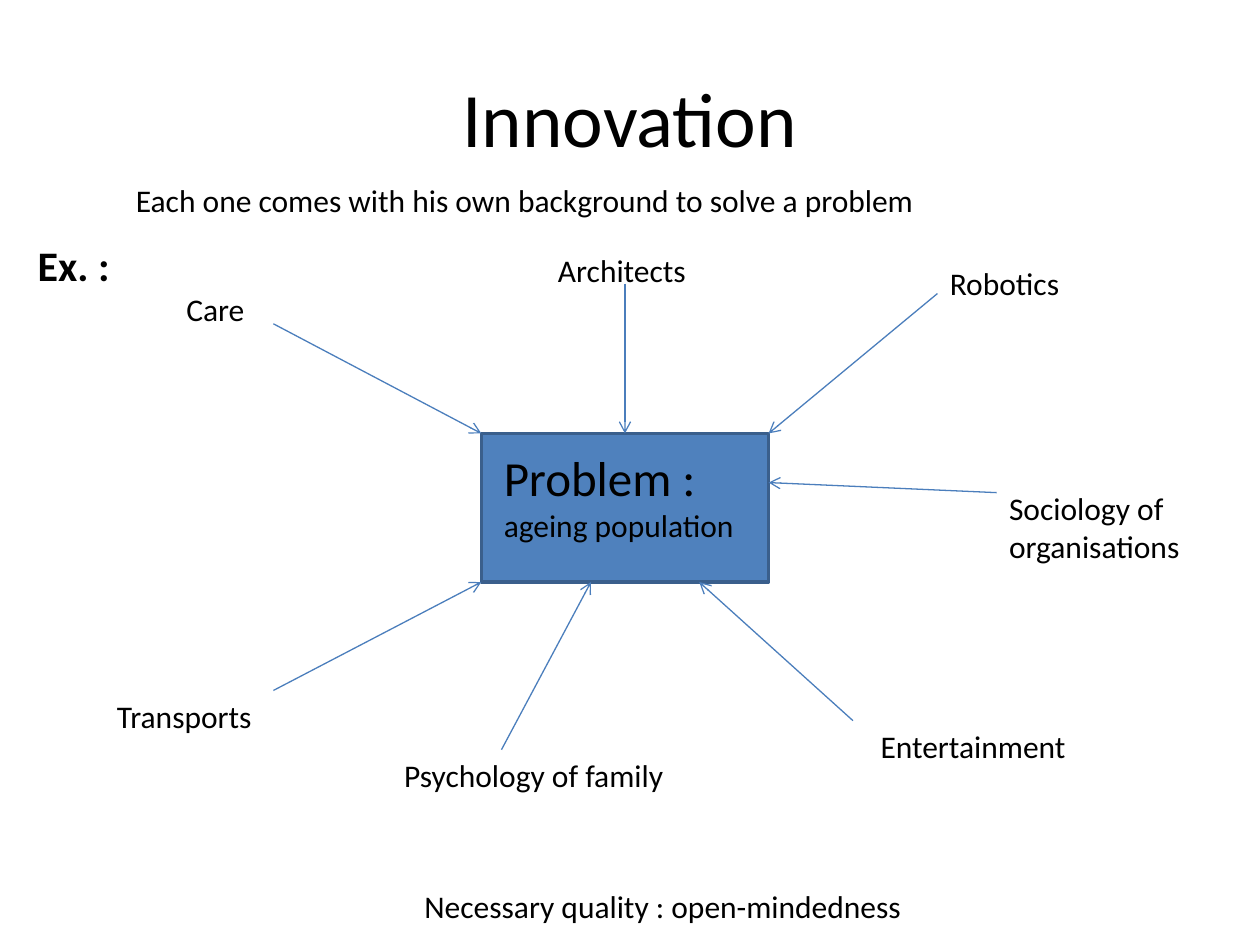
from dataclasses import dataclass

from lxml import etree
from pptx import Presentation
from pptx.dml.color import RGBColor
from pptx.enum.shapes import MSO_CONNECTOR, MSO_SHAPE
from pptx.enum.text import MSO_ANCHOR, PP_ALIGN
from pptx.oxml.ns import qn
from pptx.slide import Slide
from pptx.util import Inches, Pt

LINE = MSO_CONNECTOR.STRAIGHT
RECT = MSO_SHAPE.RECTANGLE
TOP, MIDDLE = MSO_ANCHOR.TOP, MSO_ANCHOR.MIDDLE
LEFT, CENTER = PP_ALIGN.LEFT, PP_ALIGN.CENTER

BLACK = RGBColor(0x00, 0x00, 0x00)
BLUE = RGBColor(0x4F, 0x81, 0xBD)
EDGE = RGBColor(0x3A, 0x5F, 0x8C)
ARROW = RGBColor(0x4B, 0x7E, 0xBC)
FONT = "Calibri"


@dataclass(frozen=True)
class Box:
    left: float
    top: float
    width: float
    height: float = 0.4

    @property
    def right(self) -> float:
        return self.left + self.width

    @property
    def bottom(self) -> float:
        return self.top + self.height

    def place(self) -> list[Inches]:
        return [Inches(n) for n in (self.left, self.top, self.width, self.height)]


@dataclass(frozen=True)
class Field:
    name: str
    box: Box
    start: tuple[float, float]
    end: tuple[float, float]


HUB = Box(3.82, 3.44, 2.28, 1.18)

FIELDS = [
    Field("Care", Box(1.38, 2.25, 0.79), (2.17, 2.57), (HUB.left, HUB.top)),
    Field("Transports", Box(0.83, 5.48, 1.34), (2.17, 5.48), (HUB.left, HUB.bottom)),
    Field("Architects", Box(4.33, 1.94, 1.25), (HUB.left + HUB.width / 2, 2.25),
          (HUB.left + HUB.width / 2, HUB.top)),
    Field("Robotics", Box(7.44, 2.05, 1.1), (7.44, 2.33), (HUB.right, HUB.top)),
    Field("Sociology of organisations", Box(7.91, 3.83, 1.81, 0.71),
          (7.91, 3.91), (HUB.right, 3.83)),
    Field("Entertainment", Box(6.89, 5.72, 1.73), (6.77, 5.72), (5.55, HUB.bottom)),
    Field("Psychology of family", Box(3.11, 5.95, 2.44), (3.98, 5.95), (4.69, HUB.bottom)),
]


def write(slide: Slide, text: str, box: Box, *, sizes: tuple[int, ...] = (18,),
          bold: bool = False, align: PP_ALIGN = LEFT, anchor: MSO_ANCHOR = TOP) -> None:
    frame = slide.shapes.add_textbox(*box.place()).text_frame
    frame.word_wrap = True
    frame.vertical_anchor = anchor
    frame.text = text
    for para, size in zip(frame.paragraphs, sizes):
        para.alignment = align
        font = para.runs[0].font
        font.name = FONT
        font.size = Pt(size)
        font.bold = bold
        font.color.rgb = BLACK


def draw_hub(slide: Slide) -> None:
    shape = slide.shapes.add_shape(RECT, *HUB.place())
    shape.shadow.inherit = False
    shape.fill.solid()
    shape.fill.fore_color.rgb = BLUE
    shape.line.color.rgb = EDGE
    shape.line.width = Pt(2)


def draw_arrow(slide: Slide, field: Field) -> None:
    ends = [Inches(n) for n in field.start + field.end]
    link = slide.shapes.add_connector(LINE, *ends)
    link.line.color.rgb = ARROW
    link.line.width = Pt(0.75)
    props = link.element.spPr
    etree.SubElement(props.find(qn("a:ln")), qn("a:tailEnd"), type="arrow")
    etree.SubElement(props, qn("a:effectLst"))


def main() -> None:
    deck = Presentation()
    deck.slide_width, deck.slide_height = Inches(10), Inches(7.5)
    slide = deck.slides.add_slide(deck.slide_layouts[6])

    write(slide, "Innovation", Box(0.5, 0.3, 9, 1.25), sizes=(44,), align=CENTER, anchor=MIDDLE)
    draw_hub(slide)
    for field in FIELDS:
        draw_arrow(slide, field)
    write(slide, "Problem :\nageing population", Box(3.9, 3.5, 2.13, 0.88), sizes=(28, 18))
    write(slide, "Each one comes with his own background to solve a problem",
          Box(0.98, 1.39, 8.03))
    write(slide, "Necessary quality : open-mindedness", Box(3.27, 6.99, 5.83))
    for field in FIELDS:
        write(slide, field.name, field.box)
    write(slide, "Ex. :", Box(0.2, 1.85, 0.94, 0.5), sizes=(24,), bold=True)

    deck.save("out.pptx")


if __name__ == "__main__":
    main()
